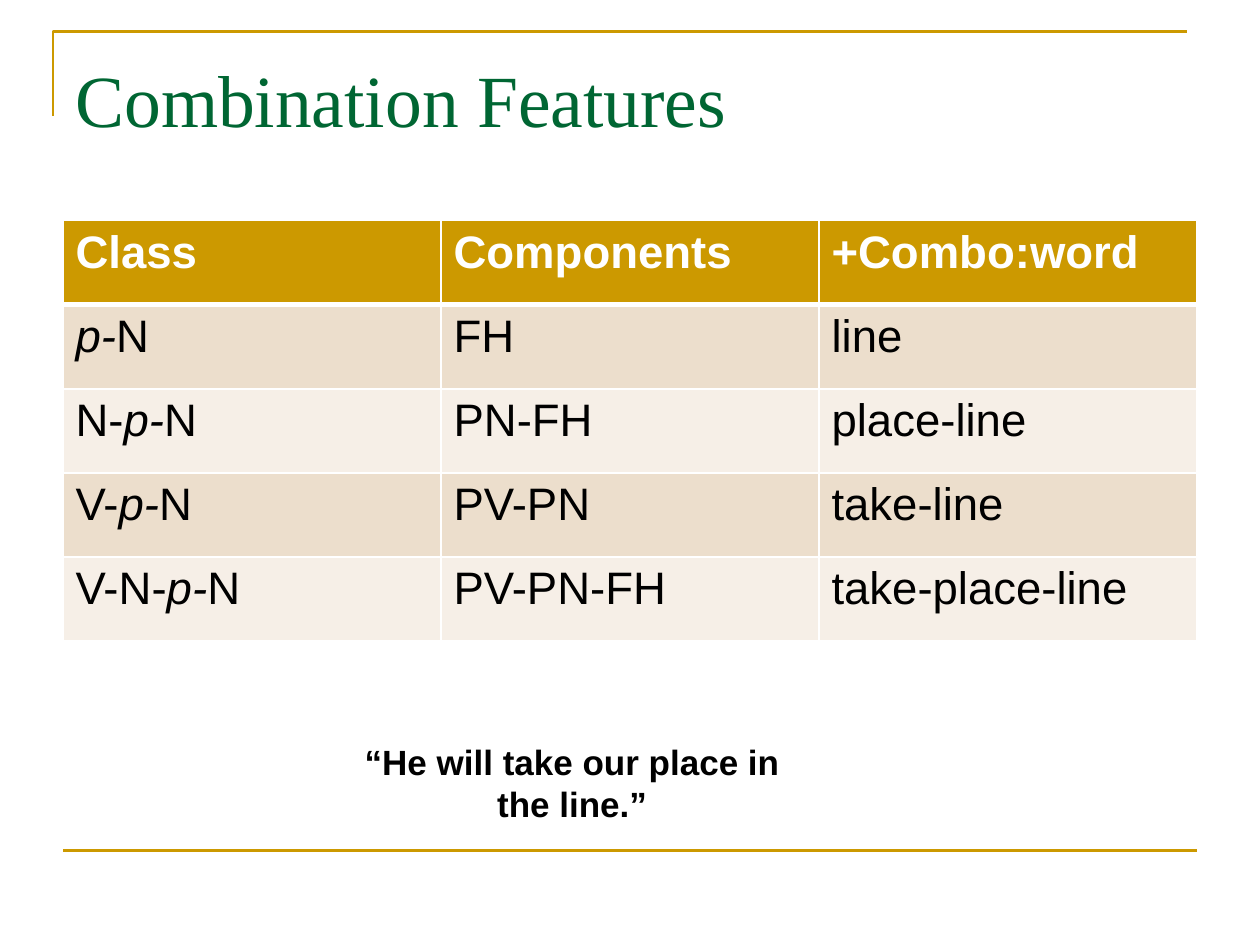
from lxml import etree
from pptx import Presentation
from pptx.dml.color import RGBColor
from pptx.enum import shapes, text
from pptx.oxml import ns
from pptx.util import Cm, Pt

GOLD, GREEN, WHITE, BLACK = "CC9900", "006633", "FFFFFF", "000000"
BANDS = ("ECDECC", "F6EFE7")
HEADER = ("Class", "Components", "+Combo:word")
# Asterisks enclose italic text.
ROWS = (
    ("*p-*N", "FH", "line"),
    ("N-*p-*N", "PN-FH", "place-line"),
    ("V-*p-*N", "PV-PN", "take-line"),
    ("V-N-*p-*N", "PV-PN-FH", "take-place-line"),
)


def colour(code):
    return RGBColor.from_string(code)


def style_line(shape):
    shape.line.color.rgb = colour(GOLD)
    shape.line.width = Pt(1.5)


def style_font(para, name, size, code, bold=False):
    para.font.name = name
    para.font.size = Pt(size)
    para.font.color.rgb = colour(code)
    para.font.bold = bold


def add_text_box(page, left, top, width, height, words):
    frame = page.shapes.add_textbox(left, top, width, height).text_frame
    frame.word_wrap = True
    frame.text = words
    return frame


def add_frame_lines(page, left, top, width, height):
    """Draw the corner bracket at the top and the rule at the bottom."""
    corner_left = left - Cm(0.2)
    pen = page.shapes.build_freeform(corner_left, top + Cm(1.7))
    pen.add_line_segments(
        [(corner_left, top), (corner_left + width, top)], close=False)
    corner = pen.convert_to_shape()
    corner.shadow.inherit = False
    corner.fill.background()
    style_line(corner)

    bottom = top + height
    rule = page.shapes.add_connector(
        shapes.MSO_CONNECTOR.STRAIGHT, left, bottom, left + width, bottom)
    style_line(rule)
    etree.SubElement(rule._element.spPr, ns.qn("a:effectLst"))


def add_title(page, left, top, width, height):
    frame = add_text_box(page, left, top, width, height, "Combination Features")
    frame.margin_top = Cm(0.33)
    style_font(frame.paragraphs[0], "Times New Roman", 42, GREEN)


def add_quote(page, left, top, width, height):
    frame = add_text_box(page, left, top, width, height,
                         "“He will take our place in the line.”")
    para = frame.paragraphs[0]
    para.alignment = text.PP_ALIGN.CENTER
    style_font(para, "Arial", 20, BLACK, bold=True)


def set_borders(cell, top, bottom):
    """Give the cell white borders; top and bottom are widths in points."""
    properties = cell._tc.get_or_add_tcPr()
    sides = (("lnL", 1), ("lnR", 1), ("lnT", top), ("lnB", bottom))
    for place, (side, width) in enumerate(sides):
        border = etree.Element(ns.qn(f"a:{side}"), w=str(Pt(width)))
        fill = etree.SubElement(border, ns.qn("a:solidFill"))
        etree.SubElement(fill, ns.qn("a:srgbClr"), val=WHITE)
        properties.insert(place, border)


def fill_cell(cell, words, row):
    is_header = row == 0
    cell.fill.solid()
    cell.fill.fore_color.rgb = colour(GOLD if is_header else BANDS[(row - 1) % 2])
    set_borders(cell, 3 if row == 1 else 1, 3 if is_header else 1)
    para = cell.text_frame.paragraphs[0]
    style_font(para, "Arial", 26, WHITE if is_header else BLACK, is_header)
    for index, part in enumerate(words.split("*")):
        if part:
            span = para.add_run()
            span.text = part
            if index % 2:
                span.font.italic = True


def add_feature_table(page, left, top, width, height):
    lines = (HEADER, *ROWS)
    table = page.shapes.add_table(
        len(lines), len(HEADER), left, top, width, height).table
    for row, line in enumerate(lines):
        for column, words in enumerate(line):
            fill_cell(table.cell(row, column), words, row)


def main():
    deck = Presentation()
    deck.slide_width, deck.slide_height = Cm(25.4), Cm(19.05)
    page = deck.slides.add_slide(deck.slide_layouts[6])
    left, width = Cm(1.27), Cm(22.86)
    add_frame_lines(page, left, Cm(0.63), width, Cm(16.51))
    add_title(page, left, Cm(0.76), width, Cm(3.18))
    add_quote(page, Cm(6.48), Cm(14.81), Cm(10.11), Cm(1.09))
    add_feature_table(page, left, Cm(4.45), width, Cm(8.47))
    deck.save("out.pptx")


if __name__ == "__main__":
    main()
